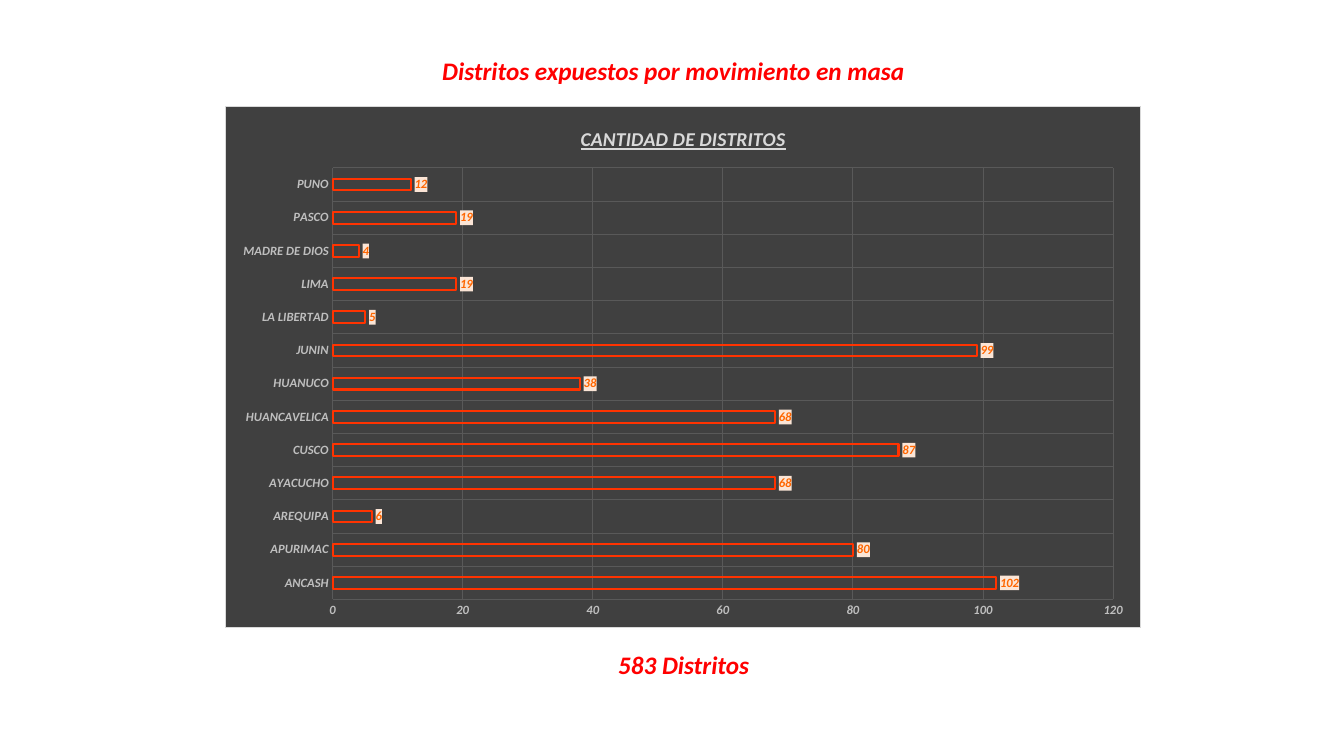
from dataclasses import dataclass

from lxml import etree
from pptx import Presentation
from pptx.chart.data import CategoryChartData
from pptx.dml.color import RGBColor
from pptx.enum.chart import XL_CHART_TYPE, XL_LABEL_POSITION, XL_TICK_MARK
from pptx.enum.text import MSO_ANCHOR, MSO_AUTO_SIZE, PP_ALIGN
from pptx.oxml import parse_xml
from pptx.oxml.ns import nsdecls, qn
from pptx.util import Cm, Pt

BARS = XL_CHART_TYPE.BAR_CLUSTERED
OUTSIDE_END = XL_LABEL_POSITION.OUTSIDE_END
NO_TICK = XL_TICK_MARK.NONE
CENTER = PP_ALIGN.CENTER
MIDDLE = MSO_ANCHOR.MIDDLE
NO_AUTOFIT = MSO_AUTO_SIZE.NONE
TITLE_ONLY = 5

DISTRICTS = {
    "ANCASH": 102, "APURIMAC": 80, "AREQUIPA": 6, "AYACUCHO": 68,
    "CUSCO": 87, "HUANCAVELICA": 68, "HUANUCO": 38, "JUNIN": 99,
    "LA LIBERTAD": 5, "LIMA": 19, "MADRE DE DIOS": 4, "PASCO": 19,
    "PUNO": 12,
}


@dataclass(frozen=True)
class Theme:
    font: str = "Calibri"
    heading: str = "FF0000"
    panel: str = "404040"
    panel_border: str = "D9D9D9"
    grid: str = "595959"
    axis_text: str = "BFBFBF"
    chart_title: str = "D9D9D9"
    bar_line: str = "FF3300"
    label_text: str = "FF6600"
    label_fill: str = "FBE5D6"
    heading_size: int = 18
    chart_title_size: int = 14
    label_size: int = 9


class SlideBuilder:
    def __init__(self, slide, theme):
        self.slide = slide
        self.theme = theme

    def style_font(self, font, size, color):
        font.name = self.theme.font
        font.size = Pt(size)
        font.bold = font.italic = True
        font.color.rgb = RGBColor.from_string(color)

    def fill_heading(self, box, text, wrap):
        frame = box.text_frame
        frame.text = text
        frame.word_wrap = wrap
        frame.auto_size = NO_AUTOFIT
        frame.vertical_anchor = MIDDLE
        paragraph = frame.paragraphs[0]
        paragraph.alignment = CENTER
        self.style_font(paragraph.runs[0].font, self.theme.heading_size,
                        self.theme.heading)

    def title(self, text, left, top, width, height):
        box = self.slide.shapes.title
        box.left, box.top, box.width, box.height = left, top, width, height
        self.fill_heading(box, text, wrap=False)

    def caption(self, text, left, top, width, height):
        box = self.slide.shapes.add_textbox(left, top, width, height)
        self.fill_heading(box, text, wrap=True)

    def bar_chart(self, title, values, left, top, width, height):
        data = CategoryChartData(number_format="#,##0")
        data.categories = list(values)
        data.add_series(title, list(values.values()))
        chart = self.slide.shapes.add_chart(
            BARS, left, top, width, height, data).chart
        chart.has_legend = False
        chart.font.name = self.theme.font
        chart.font.size = Pt(10)

        # Chart title
        chart.has_title = True
        heading = chart.chart_title.text_frame
        heading.text = title
        font = heading.paragraphs[0].runs[0].font
        self.style_font(font, self.theme.chart_title_size,
                        self.theme.chart_title)
        font.underline = True
        chart.chart_title.include_in_layout = False

        # Axes
        for axis in (chart.category_axis, chart.value_axis):
            self.axis(axis)
        chart.value_axis.minimum_scale = 0
        chart.value_axis.maximum_scale = 120
        chart.value_axis.major_unit = 20

        # Bars
        plot = chart.plots[0]
        plot.gap_width = 182
        plot.overlap = -50
        plot.vary_by_categories = False
        bars = plot.series[0]
        bars.invert_if_negative = False
        bars.format.fill.background()
        bars.format.line.color.rgb = RGBColor.from_string(self.theme.bar_line)
        bars.format.line.width = Pt(1.5)
        self.value_labels(bars.data_labels)
        self.panel(chart)

    def axis(self, axis):
        axis.major_tick_mark = axis.minor_tick_mark = NO_TICK
        axis.format.line.fill.background()
        axis.has_major_gridlines = True
        grid = axis.major_gridlines.format.line
        grid.color.rgb = RGBColor.from_string(self.theme.grid)
        grid.width = Pt(0.75)
        self.style_font(axis.tick_labels.font, self.theme.label_size,
                        self.theme.axis_text)

    def value_labels(self, labels):
        labels.show_value = True
        labels.position = OUTSIDE_END
        labels.number_format = "#,##0"
        labels.number_format_is_linked = False
        self.style_font(labels.font, self.theme.label_size,
                        self.theme.label_text)
        labels._element.find(qn("c:numFmt")).addnext(
            self.chart_fill(self.theme.label_fill))

    def chart_fill(self, color):
        return parse_xml(
            f'<c:spPr {nsdecls("c", "a")}><a:solidFill>'
            f'<a:srgbClr val="{color}"/></a:solidFill></c:spPr>')

    def panel(self, chart):
        # Background and border of the whole chart
        background = self.chart_fill(self.theme.panel)
        background.append(parse_xml(
            f'<a:ln {nsdecls("a")} w="{Pt(0.75)}"><a:solidFill>'
            f'<a:srgbClr val="{self.theme.panel_border}"/>'
            '</a:solidFill></a:ln>'))
        chart_part = chart._chartSpace.find(qn("c:chart"))
        chart_part.addnext(background)

        # Inner plot area as fractions of the chart
        plot_area = chart_part.find(qn("c:plotArea"))
        for old_layout in plot_area.findall(qn("c:layout")):
            plot_area.remove(old_layout)
        layout = etree.Element(qn("c:layout"))
        manual = etree.SubElement(layout, qn("c:manualLayout"))
        settings = {"layoutTarget": "inner", "xMode": "edge",
                    "yMode": "edge", "x": "0.117", "y": "0.118",
                    "w": "0.853", "h": "0.828"}
        for name, value in settings.items():
            etree.SubElement(manual, qn(f"c:{name}")).set("val", value)
        plot_area.insert(0, layout)


def main():
    presentation = Presentation()
    presentation.slide_width = Cm(33.87)
    presentation.slide_height = Cm(19.05)
    slide = presentation.slides.add_slide(
        presentation.slide_layouts[TITLE_ONLY])
    builder = SlideBuilder(slide, Theme())

    builder.title("Distritos expuestos por movimiento en masa",
                  Cm(10.82), Cm(1.27), Cm(12.3), Cm(1.02))
    builder.bar_chart("CANTIDAD DE DISTRITOS", DISTRICTS,
                      Cm(5.67), Cm(2.67), Cm(23.09), Cm(13.16))
    builder.caption("583 Distritos",
                    Cm(15.11), Cm(16.23), Cm(4.24), Cm(1.02))

    presentation.save("out.pptx")


if __name__ == "__main__":
    main()
